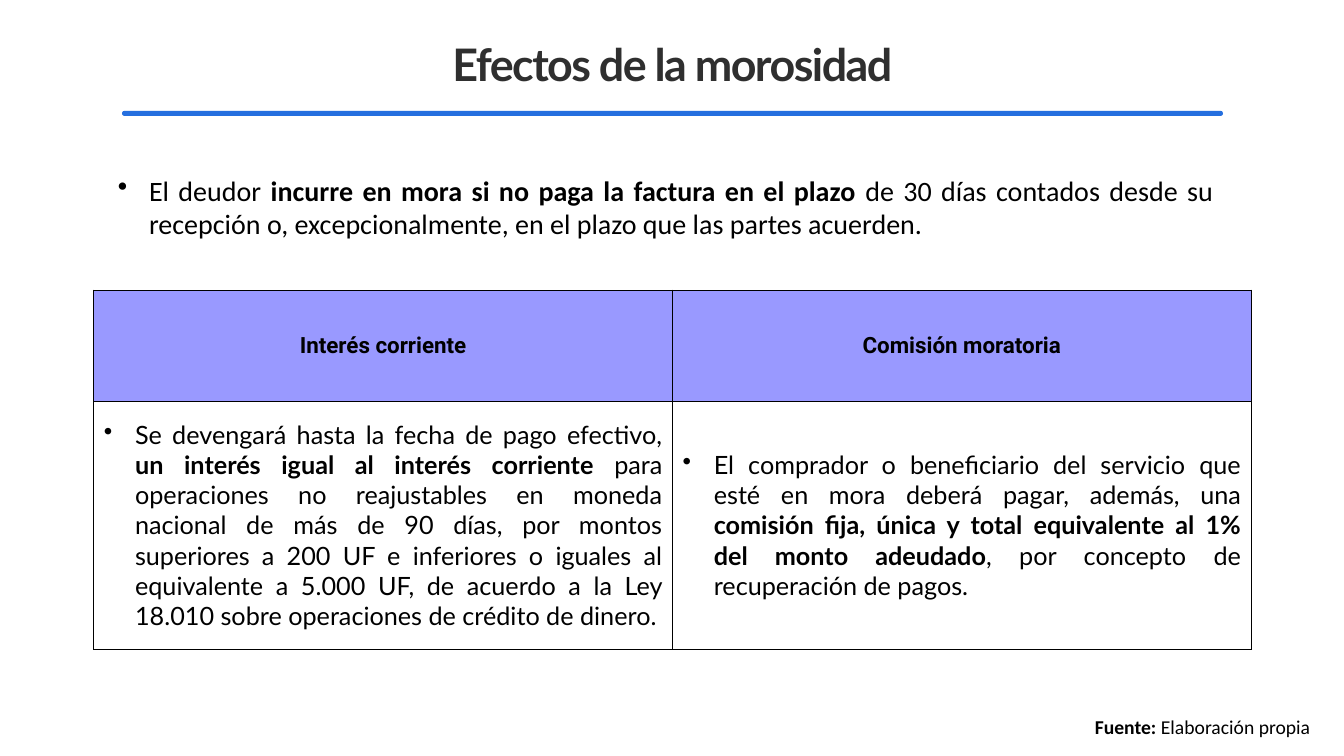
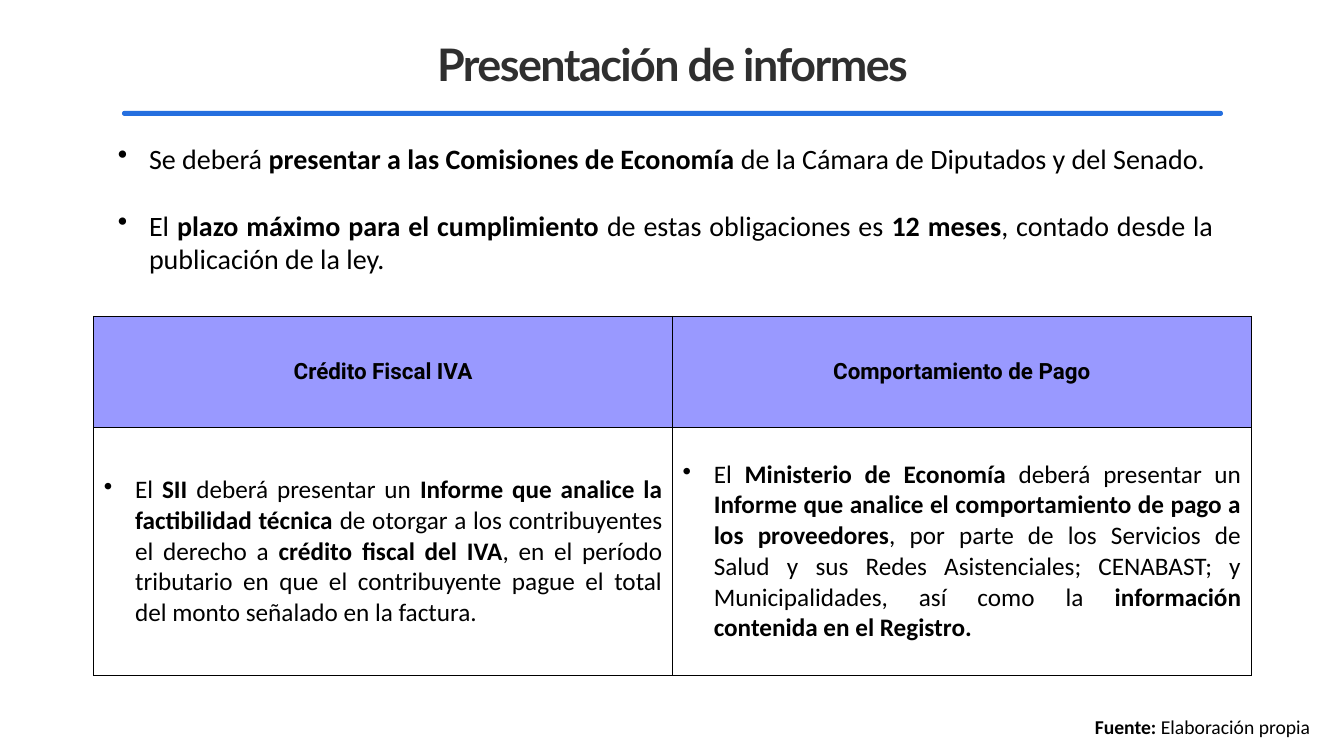
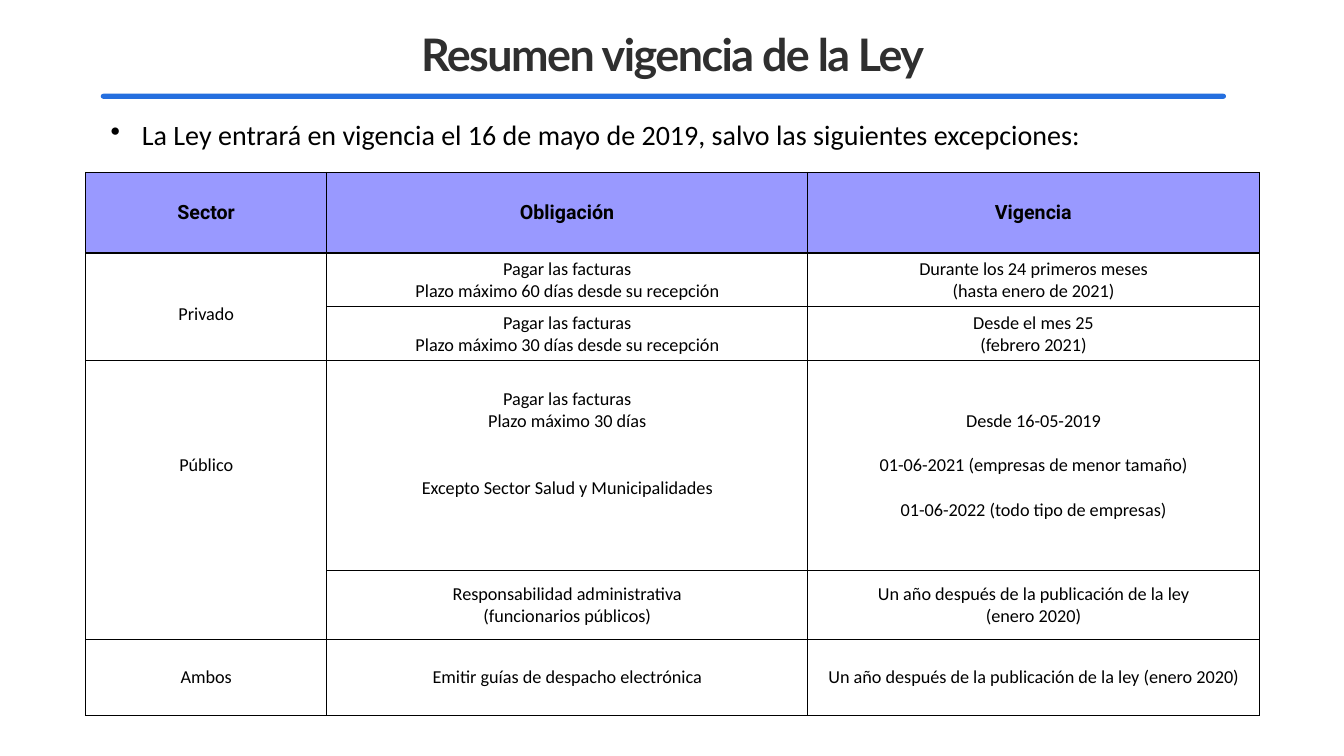
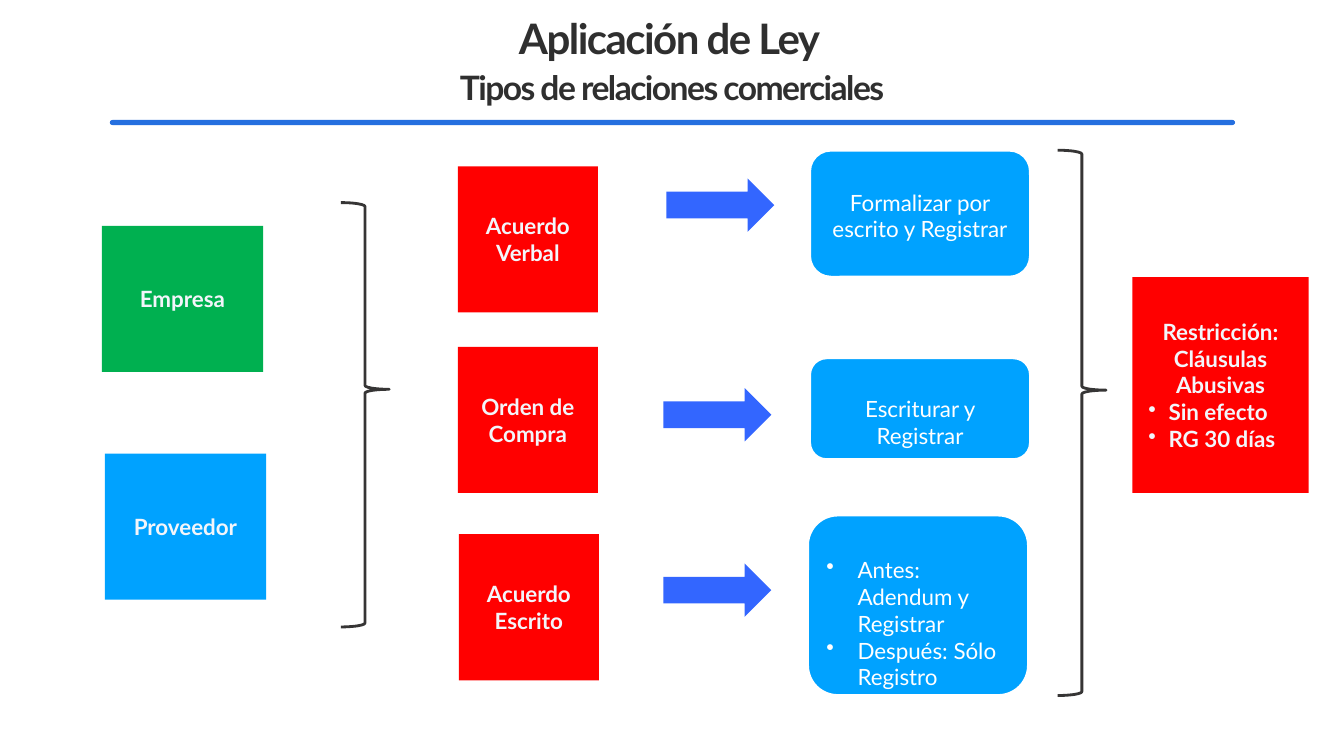
"""Builds four slides on invoice arrears, reports, entry into force and trade relations."""
from dataclasses import dataclass, replace
from itertools import product

from lxml.etree import SubElement
from pptx import Presentation
from pptx.dml.color import RGBColor
from pptx.enum.shapes import MSO_SHAPE
from pptx.enum.text import MSO_ANCHOR, PP_ALIGN
from pptx.oxml import parse_xml
from pptx.oxml.ns import nsdecls, qn
from pptx.util import Inches, Pt

COLORS = {
    "title": "2F2F2F", "rule": "256FDF", "head": "9999FF", "black": "000000",
    "white": "FFFFFF", "pale": "F3F5FA", "green": "00B050", "red": "FF0000",
    "sky": "00A2FF", "arrow": "3366FF", "brace": "363535",
}
CENTER, JUSTIFY, LEFT = PP_ALIGN.CENTER, PP_ALIGN.JUSTIFY, PP_ALIGN.LEFT
TOP, MIDDLE = MSO_ANCHOR.TOP, MSO_ANCHOR.MIDDLE


@dataclass(frozen=True)
class Style:
    font: str
    size: float
    color: str = "black"
    bold: bool = False
    spacing: int = 0


@dataclass(frozen=True)
class Line:
    """A paragraph whose parts between asterisks are bold."""
    text: str
    align: PP_ALIGN = CENTER
    indent: float = 0
    hang: float = 0
    before: float = 0


@dataclass(frozen=True)
class Area:
    left: float
    top: float
    width: float
    height: float


@dataclass(frozen=True)
class Entry:
    """A table cell."""
    lines: tuple
    anchor: MSO_ANCHOR = MIDDLE
    margin_top: float = 0.05


TITLE = Style("Lato", 32, "title", True, -110)
INTRO = Style("Calibri", 20)
FOOTER = Style("Calibri", 14)
HEADING = Style("Roboto", 16, bold=True)
BOX = Style("Lato", 16, "pale", True)
ACTION = Style("Lato", 16, "white")
TITLE_AREA = Area(1.74, 0.22, 9.86, 0.82)
RULE_AREA = Area(1.21, 1.1, 10.92, 0.05)
FOOTER_AREA = Area(10.76, 7.04, 2.43, 0.34)


def rgb(name: str) -> RGBColor:
    return RGBColor.from_string(COLORS[name])


def bullet(text: str, before: float = 0, align: PP_ALIGN = JUSTIFY,
           indent: float = 0.31, hang: float = 0.31) -> Line:
    return Line(text, align, indent, hang, before)


def centered(*texts: str) -> tuple:
    return tuple(Line(text) for text in texts)


def write(frame, lines: tuple, style: Style) -> None:
    for index, line in enumerate(lines):
        paragraph = frame.add_paragraph() if index else frame.paragraphs[0]
        paragraph.alignment = line.align
        if line.hang:
            properties = paragraph._p.get_or_add_pPr()
            properties.set("marL", str(Inches(line.indent)))
            properties.set("indent", str(-Inches(line.hang)))
            SubElement(properties, qn("a:buChar")).set("char", "•")
        if line.before:
            paragraph.space_before = Pt(line.before)
        for position, part in enumerate(line.text.split("*")):
            if not part:
                continue
            run = paragraph.add_run()
            run.text = part
            run.font.name = style.font
            run.font.size = Pt(style.size)
            run.font.bold = style.bold or position % 2 == 1
            run.font.color.rgb = rgb(style.color)
            if style.spacing:
                run._r.get_or_add_rPr().set("spc", str(style.spacing))


def place(area: Area) -> tuple:
    return Inches(area.left), Inches(area.top), Inches(area.width), Inches(area.height)


def add_text(slide, area: Area, lines: tuple, style: Style):
    frame = slide.shapes.add_textbox(*place(area)).text_frame
    frame.word_wrap = True
    write(frame, lines, style)
    return frame


def add_title(slide, text: str, area: Area = TITLE_AREA, style: Style = TITLE) -> None:
    frame = add_text(slide, area, centered(text), style)
    frame.vertical_anchor = MIDDLE
    frame.margin_left = frame.margin_right = Inches(0)
    frame.margin_top = frame.margin_bottom = Inches(0.04)


def add_figure(slide, kind: MSO_SHAPE, area: Area, fill: str = "", line: str = ""):
    figure = slide.shapes.add_shape(kind, *place(area))
    figure.shadow.inherit = False
    if fill:
        figure.fill.solid()
        figure.fill.fore_color.rgb = rgb(fill)
    else:
        figure.fill.background()
    if line:
        figure.line.color.rgb = rgb(line)
        figure.line.width = Pt(2)
    else:
        figure.line.fill.background()
    return figure


def add_rule(slide, area: Area = RULE_AREA) -> None:
    add_figure(slide, MSO_SHAPE.ROUNDED_RECTANGLE, area, "rule").adjustments[0] = 0.5


def add_box(slide, area: Area, fill: str, lines: tuple) -> None:
    frame = add_figure(slide, MSO_SHAPE.RECTANGLE, area, fill).text_frame
    frame.word_wrap = True
    frame.vertical_anchor = MIDDLE
    frame.margin_left = frame.margin_right = Inches(0.07)
    frame.margin_top = frame.margin_bottom = Inches(0.07)
    write(frame, lines, BOX)


def add_action(slide, area: Area, lines: tuple) -> None:
    frame = add_figure(slide, MSO_SHAPE.ROUNDED_RECTANGLE, area, "sky", "white").text_frame
    frame.word_wrap = True
    frame.vertical_anchor = TOP
    frame.margin_top = Inches(0.32)
    write(frame, lines, ACTION)


def add_brace(slide, area: Area) -> None:
    brace = add_figure(slide, MSO_SHAPE.RIGHT_BRACE, area, line="brace")
    brace.adjustments[0], brace.adjustments[1] = 0.08, 0.44


def add_borders(cell) -> None:
    properties = cell._tc.get_or_add_tcPr()
    for index, side in enumerate(("lnL", "lnR", "lnT", "lnB")):
        properties.insert(index, parse_xml(
            f'<a:{side} {nsdecls("a")} w="{Pt(1)}"><a:solidFill>'
            f'<a:srgbClr val="{COLORS["black"]}"/></a:solidFill></a:{side}>'))


def add_grid(slide, left: float, top: float, widths: tuple, heights: tuple,
             headings: tuple, entries: tuple, heading: Style, body: Style,
             merges: tuple = ()) -> None:
    area = Area(left, top, sum(widths), sum(heights))
    table = slide.shapes.add_table(len(heights), len(widths), *place(area)).table
    table.first_row = table.horz_banding = False
    for column, width in zip(table.columns, widths):
        column.width = Inches(width)
    for row, height in zip(table.rows, heights):
        row.height = Inches(height)
    for first, last in merges:
        table.cell(first, 0).merge(table.cell(last, 0))
    rows = (tuple(Entry(centered(text)) for text in headings), *entries)
    for row, column in product(range(len(heights)), range(len(widths))):
        cell, entry = table.cell(row, column), rows[row][column]
        cell.fill.solid()
        cell.fill.fore_color.rgb = rgb("white" if row else "head")
        add_borders(cell)
        if entry:
            cell.vertical_anchor = entry.anchor
            cell.margin_top = Inches(entry.margin_top)
            write(cell.text_frame, entry.lines, body if row else heading)


def build_comparison(slide, title: str, intro_area: Area, intro: tuple, table_top: float,
                     headings: tuple, details: tuple, body: Style) -> None:
    add_title(slide, title)
    add_rule(slide)
    entries = (tuple(Entry((bullet(text),)) for text in details),)
    add_grid(slide, 0.93, table_top, (5.74, 5.74), (1.1, 2.46), headings, entries, HEADING, body)
    add_text(slide, intro_area, intro, INTRO)
    add_text(slide, FOOTER_AREA, (Line("*Fuente:* Elaboración propia", JUSTIFY),), FOOTER)


def build_arrears(slide) -> None:
    build_comparison(
        slide, "Efectos de la morosidad", Area(1.07, 1.67, 11.06, 0.77),
        (bullet("El deudor *incurre en mora si no paga la factura en el plazo *de 30 días contados "
                "desde su recepción o, excepcionalmente, en el plazo que las partes acuerden."),),
        2.88, ("Interés corriente", "Comisión moratoria"),
        ("Se devengará hasta la fecha de pago efectivo, *un interés igual al interés corriente *"
         "para operaciones no reajustables en moneda nacional de más de 90 días, por montos "
         "superiores a 200 UF e inferiores o iguales al equivalente a 5.000 UF, de acuerdo a la "
         "Ley 18.010 sobre operaciones de crédito de dinero.",
         "El comprador o beneficiario del servicio que esté en mora deberá pagar, además, una "
         "*comisión fija, única y total equivalente al 1% del monto adeudado*, por concepto de "
         "recuperación de pagos."),
        Style("Lato", 18))


def build_reports(slide) -> None:
    build_comparison(
        slide, "Presentación de informes", Area(1.07, 1.35, 11.06, 1.45),
        (bullet("Se deberá *presentar a las Comisiones de Economía *de la Cámara de Diputados "
                "y del Senado."),
         bullet("El *plazo máximo para el cumplimiento *de estas obligaciones es *12 meses*, "
                "contado desde la publicación de la ley.", before=24)),
        3.14, ("Crédito Fiscal IVA", "Comportamiento de Pago"),
        ("El *SII *deberá presentar un *Informe que analice la factibilidad técnica *de otorgar "
         "a los contribuyentes el derecho a *crédito fiscal del IVA*, en el período tributario "
         "en que el contribuyente pague el total del monto señalado en la factura.",
         "El *Ministerio de Economía *deberá presentar un *Informe que analice el comportamiento "
         "de pago a los proveedores*, por parte de los Servicios de Salud y sus Redes "
         "Asistenciales; CENABAST; y Municipalidades, así como la *información contenida en el "
         "Registro.*"),
        Style("Calibri", 18))


def build_validity(slide) -> None:
    add_title(slide, "Resumen vigencia de la Ley", Area(2.93, 0.2, 7.48, 0.67))
    add_rule(slide, Area(1, 0.93, 11.16, 0.05))
    add_text(slide, Area(1, 1.12, 11.06, 0.77), (bullet(
        "La Ley entrará en vigencia el 16 de mayo de 2019, salvo las siguientes excepciones:"),),
        INTRO)
    pay = "Pagar las facturas"
    entries = (
        (Entry(centered("Privado"), margin_top=0.19),
         Entry(centered(pay, "Plazo máximo 60 días desde su recepción")),
         Entry(centered("Durante los 24 primeros meses", "(hasta enero de 2021)"))),
        (None,
         Entry(centered(pay, "Plazo máximo 30 días desde su recepción")),
         Entry(centered("Desde el mes 25", "(febrero 2021)"))),
        (Entry(centered("Público"), TOP, 0.93),
         Entry((*centered(pay, "Plazo máximo 30 días"),
                Line("Excepto Sector Salud y Municipalidades", before=32)), TOP, 0.27),
         Entry((Line("Desde 16-05-2019"),
                Line("01-06-2021 (empresas de menor tamaño)", before=16),
                Line("01-06-2022 (todo tipo de empresas)", before=16)))),
        (None,
         Entry(centered("Responsabilidad administrativa", "(funcionarios públicos)")),
         Entry(centered("Un año después de la publicación de la ley", "(enero 2020)"))),
        (Entry(centered("Ambos")),
         Entry(centered("Emitir guías de despacho electrónica")),
         Entry(centered("Un año después de la publicación de la ley (enero 2020)"))),
    )
    add_grid(slide, 0.85, 1.71, (2.39, 4.77, 4.48), (0.8, 0.53, 0.53, 2.08, 0.69, 0.75),
             ("Sector", "Obligación", "Vigencia"), entries,
             replace(HEADING, size=14), Style("Calibri", 13), ((2 - 1, 2), (3, 4)))


def build_relations(slide) -> None:
    add_title(slide, "Aplicación de Ley", Area(3.98, 0.1, 5.32, 0.54), replace(TITLE, size=30))
    add_title(slide, "Tipos de relaciones comerciales", Area(0.71, 0.59, 11.91, 0.54),
              replace(TITLE, size=24))
    add_rule(slide, Area(1.09, 1.19, 11.16, 0.05))
    boxes = (
        (Area(1.01, 2.24, 1.6, 1.45), "green", centered("Empresa")),
        (Area(1.04, 4.5, 1.6, 1.45), "sky", centered("Proveedor")),
        (Area(4.54, 1.65, 1.39, 1.45), "red", centered("Acuerdo", "Verbal")),
        (Area(4.54, 3.44, 1.39, 1.45), "red", centered("Orden de", "Compra")),
        (Area(4.55, 5.3, 1.39, 1.45), "red", centered("Acuerdo", "Escrito")),
        (Area(11.23, 2.75, 1.75, 2.14), "red",
         (*centered("Restricción: Cláusulas", "Abusivas"),
          *(bullet(text, indent=0.29, hang=0.2) for text in ("Sin efecto", "RG 30 días")))),
    )
    for area, fill, lines in boxes:
        add_box(slide, area, fill, lines)
    for left, top in ((6.61, 1.77), (6.58, 3.85), (6.58, 5.59)):
        add_figure(slide, MSO_SHAPE.RIGHT_ARROW, Area(left, top, 1.07, 0.53), "arrow")
    actions = (
        (Area(8.03, 1.49, 2.19, 1.26), centered("Formalizar por escrito y Registrar")),
        (Area(8.03, 3.55, 2.19, 1.01), centered("Escriturar y Registrar")),
        (Area(8.01, 5.11, 2.19, 1.79),
         (bullet("Antes: Adendum y Registrar", align=LEFT),
          bullet("Después: Sólo Registro", align=LEFT))),
    )
    for area, lines in actions:
        add_action(slide, area, lines)
    for area in (Area(3.38, 2.01, 0.48, 4.21), Area(10.49, 1.49, 0.48, 5.41)):
        add_brace(slide, area)


def main() -> None:
    deck = Presentation()
    deck.slide_width, deck.slide_height = Inches(13.33), Inches(7.5)
    for build in (build_arrears, build_reports, build_validity, build_relations):
        build(deck.slides.add_slide(deck.slide_layouts[6]))
    deck.save("out.pptx")


if __name__ == "__main__":
    main()
